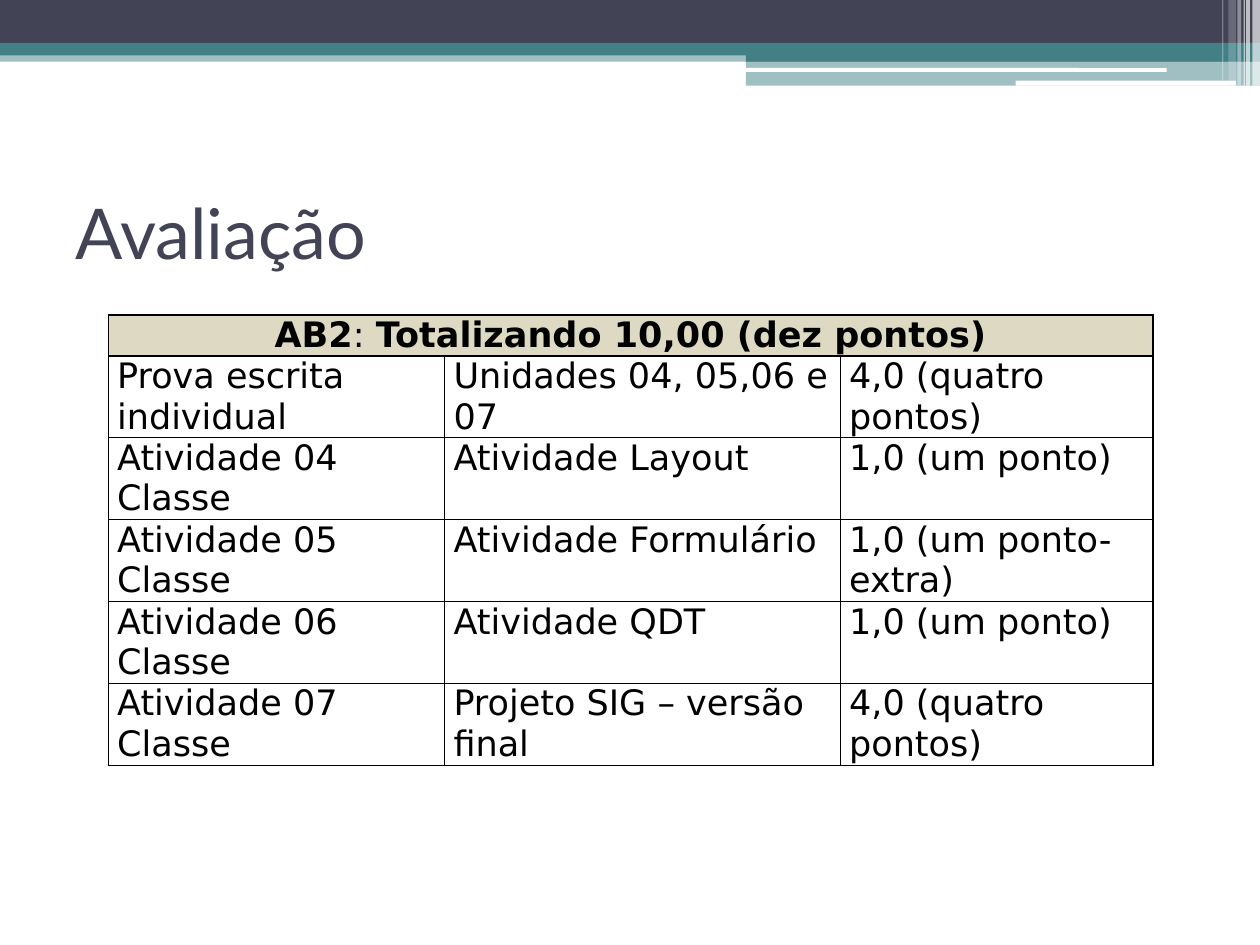
"""Build the assessment slide with its table of marks."""
import pptx
import pptx.dml.color
import pptx.enum.shapes
import pptx.enum.text
import pptx.oxml
import pptx.oxml.ns
import pptx.util
from lxml import etree

Inches, Pt = pptx.util.Inches, pptx.util.Pt
Shape = pptx.enum.shapes.MSO_SHAPE
Align = pptx.enum.text.PP_ALIGN
qn = pptx.oxml.ns.qn

DARK, TEAL, WHITE, BLACK, SAND = "424456", "438086", "FFFFFF", "000000", "DDD9C3"
TITLE = "Avaliação"
HEAD = [("AB2", True), (": ", False), ("Totalizando 10,00 (dez pontos)", True)]
ROWS = [
    ("Prova escrita individual", "Unidades 04, 05,06 e 07", "4,0 (quatro pontos)"),
    ("Atividade 04 Classe", "Atividade Layout", "1,0 (um ponto)"),
    ("Atividade 05 Classe", "Atividade Formulário", "1,0 (um ponto-extra)"),
    ("Atividade 06 Classe", "Atividade QDT", "1,0 (um ponto)"),
    ("Atividade 07 Classe", "Projeto SIG – versão final", "4,0 (quatro pontos)"),
]
COLS = [2.67, 3.14, 2.48]
HEAD_H, ROW_H = 0.32, 0.65
BANDS = [
    (0, 0.4, 10, 0.09, TEAL, 50),
    (0, 0, 10, 0.34, DARK, 100),
    (0, 0.34, 10, 0.1, TEAL, 100),
    (5.92, 0.39, 4.08, 0.1, TEAL, 100),
    (5.92, 0.48, 4.08, 0.2, TEAL, 50),
]
PILLS = [(5.91, 0.54, 3.35, 0.03), (8.06, 0.64, 1.75, 0.04)]
STRIPES = [
    (9.94, 0.06, 0.68, 65),
    (9.89, 0.03, 0.68, 65),
    (9.87, 0.01, 0.68, 60),
    (9.82, 0.03, 0.68, 40),
    (9.75, 0.06, 0.64, 20),
    (9.7, 0.01, 0.64, 30),
]


def paint(fill, color):
    fill.solid()
    fill.fore_color.rgb = pptx.dml.color.RGBColor.from_string(color)


def add_bar(slide, kind, box, color, alpha=100):
    bar = slide.shapes.add_shape(kind, *map(Inches, box))
    bar.shadow.inherit = False
    bar.line.fill.background()
    paint(bar.fill, color)
    if alpha < 100:
        tint = bar.fill._xPr.find(".//" + qn("a:srgbClr"))
        etree.SubElement(tint, qn("a:alpha"), val=str(alpha * 1000))
    return bar


def style(run, font, size, color, bold=False):
    run.font.name, run.font.size, run.font.bold = font, Pt(size), bold
    paint(run.font.fill, color)


def add_edges(cell):
    props = cell._tc.get_or_add_tcPr()
    for side in ("lnL", "lnR", "lnT", "lnB"):
        edge = etree.SubElement(props, qn("a:" + side), w=str(Pt(1)))
        fill = etree.SubElement(edge, qn("a:solidFill"))
        etree.SubElement(fill, qn("a:srgbClr"), val=BLACK)


def set_cell(cell, parts, color, align):
    cell.margin_left = cell.margin_right = Inches(0.07)
    cell.margin_top = cell.margin_bottom = 0
    para = cell.text_frame.paragraphs[0]
    para.alignment, para.space_before = align, Pt(6)
    for text, bold in parts:
        run = para.add_run()
        run.text = text
        style(run, "DejaVu Sans", 20, BLACK, bold)
    paint(cell.fill, color)


def add_marks(slide):
    high = HEAD_H + ROW_H * len(ROWS)
    frame = slide.shapes.add_table(
        len(ROWS) + 1, len(COLS), *map(Inches, (0.86, 2.5, sum(COLS), high)))
    table = frame.table
    table.horz_banding = False
    for col, width in zip(table.columns, COLS):
        col.width = Inches(width)
    for num, row in enumerate(table.rows):
        row.height = Inches(ROW_H if num else HEAD_H)
    for cell in table.iter_cells():
        add_edges(cell)
    top = table.cell(0, 0)
    top.merge(table.cell(0, len(COLS) - 1))
    set_cell(top, HEAD, SAND, Align.CENTER)
    for r, texts in enumerate(ROWS, 1):
        for c, text in enumerate(texts):
            set_cell(table.cell(r, c), [(text, False)], WHITE, Align.LEFT)


def set_title(slide):
    title = slide.shapes.title
    title.left, title.top, title.width, title.height = map(Inches, (0.5, 1.25, 9, 1.17))
    frame = title.text_frame
    frame.text = TITLE
    frame.vertical_anchor = pptx.enum.text.MSO_ANCHOR.MIDDLE
    para = frame.paragraphs[0]
    para.alignment = Align.LEFT
    style(para.runs[0], "Lato", 40, DARK)


def main():
    deck = pptx.Presentation()
    deck.slide_width, deck.slide_height = Inches(10), Inches(7.5)
    slide = deck.slides.add_slide(deck.slide_layouts[5])
    paint(slide.background.fill, WHITE)
    for *box, color, alpha in BANDS:
        add_bar(slide, Shape.RECTANGLE, box, color, alpha)
    for box in PILLS:
        add_bar(slide, Shape.ROUNDED_RECTANGLE, box, WHITE)
    for left, width, high, alpha in STRIPES:
        add_bar(slide, Shape.RECTANGLE, (left, 0, width, high), WHITE, alpha)
    set_title(slide)
    add_marks(slide)
    deck.save("out.pptx")


if __name__ == "__main__":
    main()
